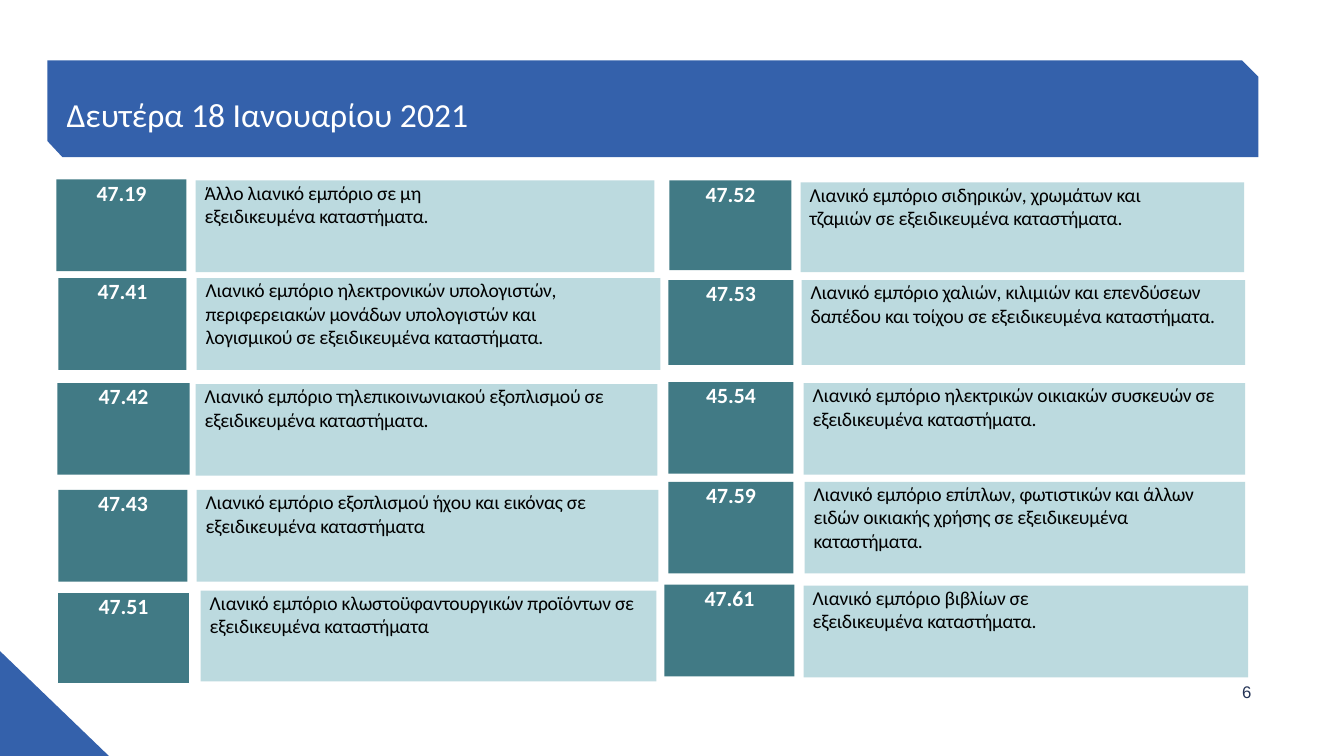
"""Build the slide of retail trade codes for Monday 18 January 2021."""
from pptx import Presentation
from pptx.dml.color import RGBColor
from pptx.enum.shapes import MSO_SHAPE
from pptx.enum.text import MSO_ANCHOR, PP_ALIGN
from pptx.util import Inches, Pt

BLUE = RGBColor(0x34, 0x61, 0xAB)
TEAL = RGBColor(0x41, 0x7A, 0x85)
PALE = RGBColor(0xBC, 0xDA, 0xDF)
NAVY = RGBColor(0x24, 0x33, 0x55)
WHITE = RGBColor(0xFF, 0xFF, 0xFF)
BLACK = RGBColor(0, 0, 0)
CELL = Inches(0.01)
COLS, ROWS = 1333, 750
PAD = 9

deck = Presentation()
deck.slide_width, deck.slide_height = COLS * CELL, ROWS * CELL
slide = deck.slides.add_slide(deck.slide_layouts[6])
shapes = slide.shapes


def write(shape, text, size, color, left=0, right=0, face="Calibri",
          bold=False, align=PP_ALIGN.LEFT, track=0):
    """Fill a shape with text, its side margins given in grid columns."""
    frame = shape.text_frame
    frame.word_wrap = True
    frame.vertical_anchor = MSO_ANCHOR.TOP
    frame.margin_top = frame.margin_bottom = 0
    frame.margin_left, frame.margin_right = left * CELL, right * CELL
    frame.text = text
    for para in frame.paragraphs:
        para.alignment = align
        font = para.font
        font.name, font.size, font.bold = face, Pt(size), bold
        font.color.rgb = color
        for run in para.runs:
            run._r.get_or_add_rPr().set("spc", str(track))


def paint(shape, color):
    """Give a shape a flat fill with no line or shadow."""
    shape.shadow.inherit = False
    shape.fill.solid()
    shape.fill.fore_color.rgb = color
    shape.line.fill.background()


corner = [(0, 646), (0, ROWS), (108, ROWS)]
banner = [(1232, 60), (47, 60), (47, 140), (62, 156), (1248, 156), (1248, 76)]
for points in (corner, banner):
    pen = shapes.build_freeform(*points[0], scale=CELL)
    pen.add_line_segments(points[1:], close=True)
    paint(pen.convert_to_shape(), BLUE)

title = shapes.add_textbox(57 * CELL, 93 * CELL, 1219 * CELL, 36 * CELL)
write(title, "Δευτέρα 18 Ιανουαρίου 2021", 24, WHITE, left=PAD)

# Each entry: code, code left, top and width, text left, top and width, height, right margin, text
trades = [
    ("47.19", 56, 178, 129, 194, 179, 455, 91, 140,
     "Άλλο λιανικό εμπόριο σε μη εξειδικευμένα καταστήματα."),
    ("47.41", 58, 276, 127, 195, 276, 460, 91, 60,
     "Λιανικό εμπόριο ηλεκτρονικών υπολογιστών, περιφερειακών μονάδων "
     "υπολογιστών και λογισμικού σε εξειδικευμένα καταστήματα."),
    ("47.42", 57, 380, 131, 194, 381, 458, 91, 53,
     "Λιανικό εμπόριο τηλεπικοινωνιακού εξοπλισμού σε εξειδικευμένα καταστήματα."),
    ("47.43", 58, 486, 128, 195, 486, 458, 91, 70,
     "Λιανικό εμπόριο εξοπλισμού ήχου και εικόνας σε εξειδικευμένα καταστήματα"),
    ("47.51", 57, 588, 131, 199, 586, 452, 90, 0,
     "Λιανικό εμπόριο κλωστοϋφαντουργικών προϊόντων σε\nεξειδικευμένα καταστήματα"),
    ("47.52", 664, 179, 121, 794, 181, 440, 89, 60,
     "Λιανικό εμπόριο σιδηρικών, χρωμάτων και τζαμιών σε εξειδικευμένα καταστήματα."),
    ("47.53", 663, 278, 124, 795, 278, 440, 84, 23,
     "Λιανικό εμπόριο χαλιών, κιλιμιών και επενδύσεων δαπέδου και τοίχου "
     "σε εξειδικευμένα καταστήματα."),
    ("45.54", 663, 379, 124, 797, 380, 438, 91, 0,
     "Λιανικό εμπόριο ηλεκτρικών οικιακών συσκευών σε\nεξειδικευμένα καταστήματα."),
    ("47.59", 663, 478, 124, 798, 478, 437, 91, 44,
     "Λιανικό εμπόριο επίπλων, φωτιστικών και άλλων ειδών οικιακής χρήσης "
     "σε εξειδικευμένα καταστήματα."),
    ("47.61", 659, 580, 129, 797, 581, 441, 91, 150,
     "Λιανικό εμπόριο βιβλίων σε εξειδικευμένα καταστήματα."),
]
for code, x, y, wide, left, top, span, high, gap, text in trades:
    tag = shapes.add_shape(MSO_SHAPE.RECTANGLE, x * CELL, y * CELL, wide * CELL, high * CELL)
    paint(tag, TEAL)
    write(tag, code, 15.5, WHITE, bold=True, align=PP_ALIGN.CENTER)
    if code == "47.51":
        tag.line.color.rgb, tag.line.width = WHITE, Pt(0.75)
    box = shapes.add_shape(MSO_SHAPE.RECTANGLE, left * CELL, top * CELL, span * CELL, high * CELL)
    paint(box, PALE)
    write(box, text, 14, BLACK, left=PAD, right=gap, track=-20)

page = shapes.add_textbox(1231 * CELL, 676 * CELL, 12 * CELL, 19 * CELL)
write(page, "6", 12, NAVY, left=1, face="Arial")

deck.save("out.pptx")
